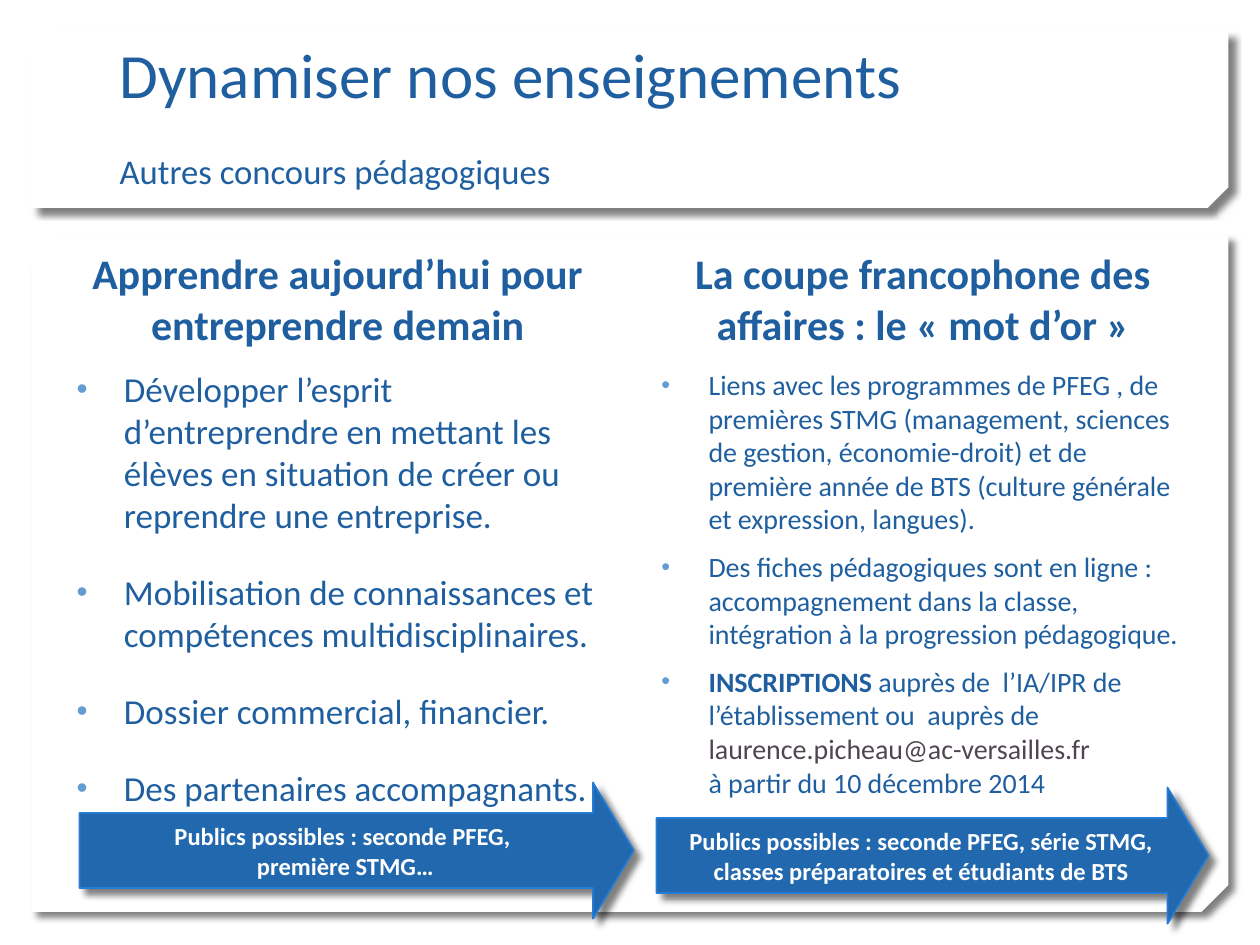
from pptx import Presentation
from pptx.dml.color import RGBColor
from pptx.enum.shapes import MSO_SHAPE
from pptx.enum.text import MSO_ANCHOR, MSO_AUTO_SIZE, PP_ALIGN
from pptx.oxml import parse_xml
from pptx.oxml.ns import nsdecls, qn
from pptx.util import Pt

BLUE = RGBColor(0x1F, 0x5F, 0xA0)
BULLET_BLUE = RGBColor(0x62, 0x9D, 0xD1)
ARROW_FILL = RGBColor(0x21, 0x68, 0xAE)
ARROW_EDGE = RGBColor(0x24, 0x7C, 0xD5)
MAIL_GREY = RGBColor(0x50, 0x46, 0x52)
WHITE = RGBColor(0xFF, 0xFF, 0xFF)

LEFT_ITEMS = [
    "Développer l’esprit d’entreprendre en mettant les élèves en situation "
    "de créer ou reprendre une entreprise.",
    "Mobilisation de connaissances et compétences multidisciplinaires.",
    "Dossier commercial, financier.",
    "Des partenaires accompagnants.",
]
RIGHT_ITEMS = [
    "Liens avec les programmes de PFEG , de premières STMG (management, "
    "sciences de gestion, économie-droit) et de première année de BTS "
    "(culture générale et expression, langues).",
    "Des fiches pédagogiques sont en ligne : accompagnement dans la classe, "
    "intégration à la progression pédagogique.",
]


def place(shape, box):
    shape.left, shape.top, shape.width, shape.height = (Pt(length) for length in box)


def set_font(paragraph, size, color=BLUE, bold=False):
    font = paragraph.font
    font.name, font.size, font.bold = "Calibri", Pt(size), bold
    font.color.rgb = color


def add_shadow(shape):
    shape.shadow.inherit = False
    effects = shape.element.spPr.find(qn("a:effectLst"))
    effects.append(parse_xml(
        f'<a:outerShdw {nsdecls("a")} blurRad="{Pt(4)}" dist="{Pt(5)}" '
        'dir="2700000" algn="tl" rotWithShape="0">'
        '<a:srgbClr val="000000"><a:alpha val="50000"/></a:srgbClr></a:outerShdw>'))


def add_panel(page, box, snip):
    panel = page.shapes.add_shape(
        MSO_SHAPE.SNIP_2_DIAG_RECTANGLE, *(Pt(length) for length in box))
    panel.adjustments[0] = 0
    panel.adjustments[1] = snip
    panel.element.spPr.find(qn("a:xfrm")).set("flipV", "1")
    panel.fill.solid()
    panel.fill.fore_color.rgb = WHITE
    panel.line.fill.background()
    add_shadow(panel)


def add_text_box(page, box):
    text_box = page.shapes.add_textbox(*(Pt(length) for length in box))
    text_box.text_frame.word_wrap = True
    return text_box.text_frame


def format_title(page, box):
    title = page.shapes.title
    title.element.getparent().append(title.element)
    place(title, box)
    frame = title.text_frame
    frame.auto_size = MSO_AUTO_SIZE.NONE
    frame.vertical_anchor = MSO_ANCHOR.BOTTOM
    heading, subtitle = frame.paragraphs[0], frame.add_paragraph()
    heading.text = "Dynamiser nos enseignements"
    subtitle.text = "Autres concours pédagogiques"
    subtitle.space_before = Pt(22)
    for paragraph, size in ((heading, 36), (subtitle, 19.8)):
        paragraph.alignment = PP_ALIGN.LEFT
        set_font(paragraph, size)


def add_heading(page, box, text):
    frame = add_text_box(page, box)
    frame.vertical_anchor = MSO_ANCHOR.MIDDLE
    paragraph = frame.paragraphs[0]
    paragraph.text = text
    paragraph.alignment = PP_ALIGN.CENTER
    set_font(paragraph, 24, bold=True)


def format_bullet(paragraph, size, gap):
    properties = paragraph._p.get_or_add_pPr()
    properties.set("marL", str(Pt(27)))
    properties.set("indent", str(Pt(-27)))
    for tag in (f'buClr {nsdecls("a")}><a:srgbClr val="{BULLET_BLUE}"/></a:buClr',
                f'buSzPct {nsdecls("a")} val="90000"/',
                f'buFont {nsdecls("a")} typeface="Arial"/',
                f'buChar {nsdecls("a")} char="•"/'):
        properties.append(parse_xml(f"<a:{tag}>"))
    paragraph.space_before = Pt(gap)
    set_font(paragraph, size)


def add_bullets(page, box, items, size, gap):
    frame = add_text_box(page, box)
    for index, item in enumerate(items):
        paragraph = frame.add_paragraph() if index else frame.paragraphs[0]
        paragraph.text = item
        format_bullet(paragraph, size, gap)
    return frame


def add_registration(frame, size, gap):
    paragraph = frame.add_paragraph()
    format_bullet(paragraph, size, gap)
    label = paragraph.add_run()
    label.text = "INSCRIPTIONS"
    label.font.bold = True
    paragraph.add_run().text = " auprès de  l’IA/IPR de l’établissement ou  auprès de "
    mail = paragraph.add_run()
    mail.text = "laurence.picheau@ac-versailles.fr "
    mail.font.color.rgb = MAIL_GREY
    paragraph.add_line_break()
    paragraph.add_run().text = "à partir du 10 décembre 2014"


def add_arrow(page, box, lines):
    arrow = page.shapes.add_shape(
        MSO_SHAPE.RIGHT_ARROW, *(Pt(length) for length in box))
    arrow.adjustments[0] = 0.55
    arrow.adjustments[1] = 0.3
    arrow.fill.solid()
    arrow.fill.fore_color.rgb = ARROW_FILL
    arrow.line.color.rgb = ARROW_EDGE
    arrow.line.width = Pt(1)
    add_shadow(arrow)
    frame = arrow.text_frame
    frame.word_wrap = True
    frame.vertical_anchor = MSO_ANCHOR.MIDDLE
    frame.text = "\n".join(lines)
    for paragraph in frame.paragraphs:
        paragraph.alignment = PP_ALIGN.CENTER
        set_font(paragraph, 14, WHITE, bold=True)


def add_column(page, box, heading, items, size, gap):
    left, top, width, height = box
    heading_height = 68.4
    body_top = top + 70.5
    add_heading(page, (left, top, width, heading_height), heading)
    body_box = (left, body_top, width, top + height - body_top)
    return add_bullets(page, body_box, items, size, gap)


def main():
    deck = Presentation()
    deck.slide_width, deck.slide_height = Pt(720), Pt(540)
    page = deck.slides.add_slide(deck.slide_layouts[5])

    add_panel(page, (18, 134.6, 684, 386.6), 0.04)
    add_panel(page, (18, 18, 684, 100.8), 0.117)
    format_title(page, (61.2, 23, 596.9, 90))

    add_column(page, (36.7, 136.1, 312.5, 326.8),
               "Apprendre aujourd’hui pour entreprendre demain",
               LEFT_ITEMS, 20, 20)
    right_body = add_column(page, (370.8, 136.1, 313.2, 326.8),
                            "La coupe francophone des affaires : le «\u00a0mot d’or\u00a0»".replace("\u00a0", " "),
                            RIGHT_ITEMS, 16, 8)
    add_registration(right_body, 16, 8)

    add_arrow(page, (45.4, 447.1, 316.8, 77.8),
              ["Publics possibles : seconde PFEG, ", "première STMG…"])
    add_arrow(page, (375.1, 450, 315.4, 77.8),
              ["Publics possibles : seconde PFEG, série STMG, "
               "classes préparatoires et étudiants de BTS"])
    deck.save("out.pptx")


if __name__ == "__main__":
    main()
